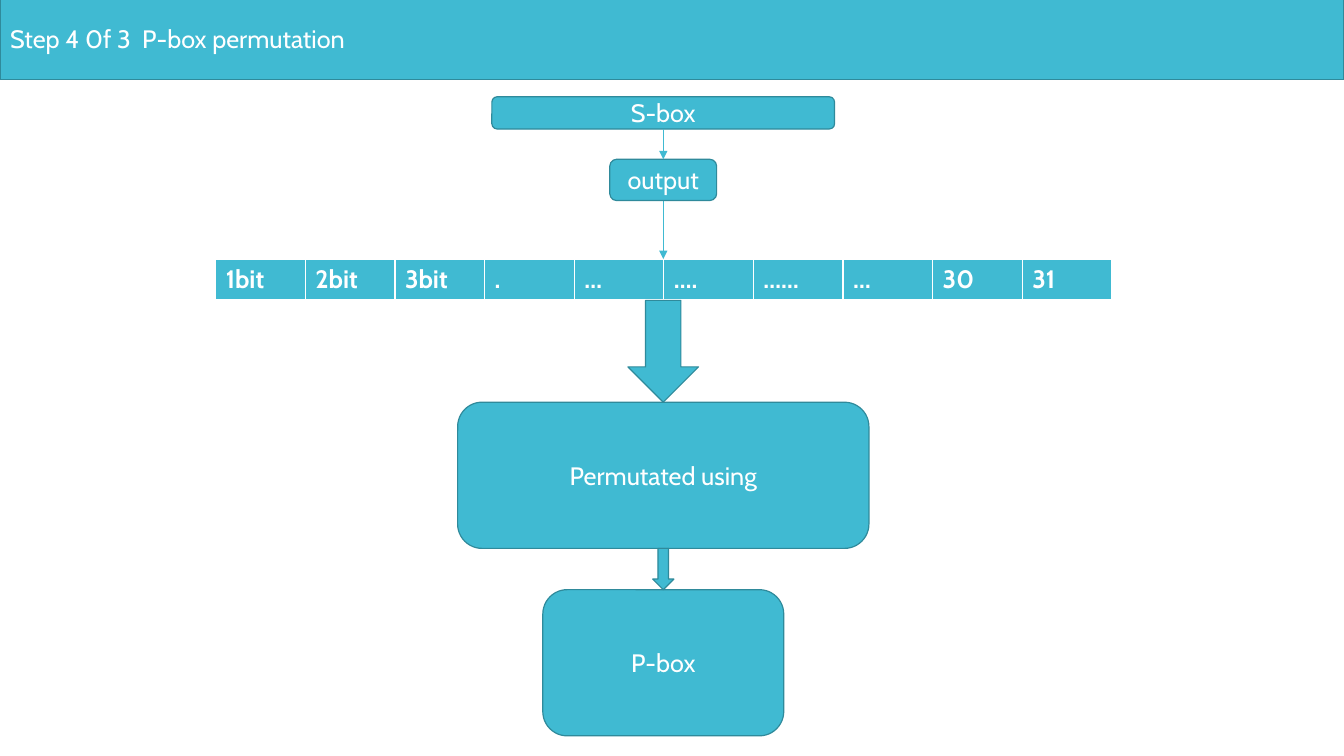
import lxml.etree
import pptx
import pptx.dml.color
import pptx.enum.shapes
import pptx.enum.text
import pptx.oxml.ns
import pptx.util

COLORS = {"teal": "40BAD2", "edge": "2F8A9B", "white": "FFFFFF"}
SHAPES = pptx.enum.shapes.MSO_SHAPE
ALIGN = pptx.enum.text.PP_ALIGN
MIDDLE = pptx.enum.text.MSO_ANCHOR.MIDDLE
FONT = "Cabin"
COLUMNS, ROWS = 133.33, 75
BITS = ["1bit", "2bit", "3bit", ".", "…", "….", "……", "…", "30", "31"]


def cells(count):
    """Return the length of a number of grid cells, each a tenth of an inch."""
    return pptx.util.Inches(count / 10)


def color(name):
    """Return a palette colour."""
    return pptx.dml.color.RGBColor.from_string(COLORS[name])


def write(frame, text, align=ALIGN.CENTER, size=18, bold=False):
    """Write one formatted paragraph into a text frame."""
    paragraph = frame.paragraphs[0]
    paragraph.alignment = align
    run = paragraph.add_run()
    run.text = text
    run.font.name = FONT
    run.font.size = pptx.util.Pt(size)
    run.font.bold = bold
    run.font.color.rgb = color("white")


def paint(part):
    """Give a part the teal fill and dark edge."""
    part.fill.solid()
    part.fill.fore_color.rgb = color("teal")
    part.line.color.rgb = color("edge")
    part.line.width = pptx.util.Pt(0.85)


def add_stage(slide, kind, center, top, width, height, label=None):
    """Add a block or block arrow centred on the flow axis."""
    stage = slide.shapes.add_shape(
        kind, cells(center - width / 2), cells(top), cells(width), cells(height))
    stage.shadow.inherit = False
    paint(stage)
    if label:
        stage.text_frame.word_wrap = True
        stage.text_frame.vertical_anchor = MIDDLE
        write(stage.text_frame, label)


def add_arrow(slide, center, top, bottom):
    """Add a thin downward arrow on the flow axis."""
    arrow = slide.shapes.add_connector(
        pptx.enum.shapes.MSO_CONNECTOR.STRAIGHT,
        cells(center), cells(top), cells(center), cells(bottom))
    arrow.line.color.rgb = color("teal")
    arrow.line.width = pptx.util.Pt(0.75)
    properties = arrow.element.spPr
    qn = pptx.oxml.ns.qn
    lxml.etree.SubElement(properties.find(qn("a:ln")), qn("a:tailEnd"), type="triangle")
    lxml.etree.SubElement(properties, qn("a:effectLst"))


def add_title(slide, left, top, width, height):
    """Turn the title placeholder into the banner."""
    title = slide.shapes.title
    title.left, title.top = cells(left), cells(top)
    title.width, title.height = cells(width), cells(height)
    paint(title)
    frame = title.text_frame
    frame.auto_size = pptx.enum.text.MSO_AUTO_SIZE.NONE
    frame.vertical_anchor = MIDDLE
    write(frame, "Step 4 0f 3  P-box permutation", align=ALIGN.LEFT)


def add_source(slide, left, top, width, height):
    """Add the S-box, its output and the arrows down to the bits."""
    center = left + width / 2
    output_top, output_height = top + 6.2, 4.1
    add_arrow(slide, center, output_top + output_height, top + height)
    add_stage(slide, SHAPES.ROUNDED_RECTANGLE, center, top, width, 3.2, "S-box")
    add_stage(slide, SHAPES.ROUNDED_RECTANGLE, center, output_top, 10.6,
              output_height, "output")
    add_arrow(slide, center, top + 3.2, output_top)


def set_borders(cell):
    """Draw white cell borders with a heavier bottom edge."""
    properties = cell._tc.get_or_add_tcPr()
    qn = pptx.oxml.ns.qn
    for index, (side, points) in enumerate([("L", 1), ("R", 1), ("T", 1), ("B", 3)]):
        border = lxml.etree.Element(qn("a:ln" + side), w=str(pptx.util.Pt(points)))
        fill = lxml.etree.SubElement(border, qn("a:solidFill"))
        lxml.etree.SubElement(fill, qn("a:srgbClr"), val=COLORS["white"])
        properties.insert(index, border)


def add_bits(slide, left, top, width, height):
    """Add the row of output bits as a table."""
    bits = slide.shapes.add_table(
        1, len(BITS), cells(left), cells(top), cells(width), cells(height)).table
    for column, (cell, bit) in enumerate(zip(bits.rows[0].cells, BITS)):
        bits.columns[column].width = cells(width / len(BITS))
        cell.fill.solid()
        cell.fill.fore_color.rgb = color("teal")
        set_borders(cell)
        write(cell.text_frame, bit, align=ALIGN.LEFT, bold=True)


def add_permutation(slide, left, top, width, height):
    """Add the permutation block, the P-box and the block arrows."""
    center = left + width / 2
    block = 14.5
    first_arrow, second_arrow = 10.1, 4.1
    permuted_top = top + first_arrow
    add_stage(slide, SHAPES.DOWN_ARROW, center, top, 7, first_arrow)
    add_stage(slide, SHAPES.ROUNDED_RECTANGLE, center, permuted_top, width, block,
              "Permutated using")
    add_stage(slide, SHAPES.ROUNDED_RECTANGLE, center, top + height - block, 23.9,
              block, "P-box")
    add_stage(slide, SHAPES.DOWN_ARROW, center, permuted_top + block, 2.1, second_arrow)


def main():
    """Build and save the slide."""
    deck = pptx.Presentation()
    deck.slide_width, deck.slide_height = cells(COLUMNS), cells(ROWS)
    slide = deck.slides.add_slide(deck.slide_layouts[5])
    add_title(slide, 0, -0.2, COLUMNS, 8.1)
    add_bits(slide, 21.4, 25.7, 88.9, 4.1)
    add_permutation(slide, 45.4, 29.8, 40.8, 43.2)
    add_source(slide, 48.8, 9.6, 34, 16.1)
    deck.save("out.pptx")


if __name__ == "__main__":
    main()
